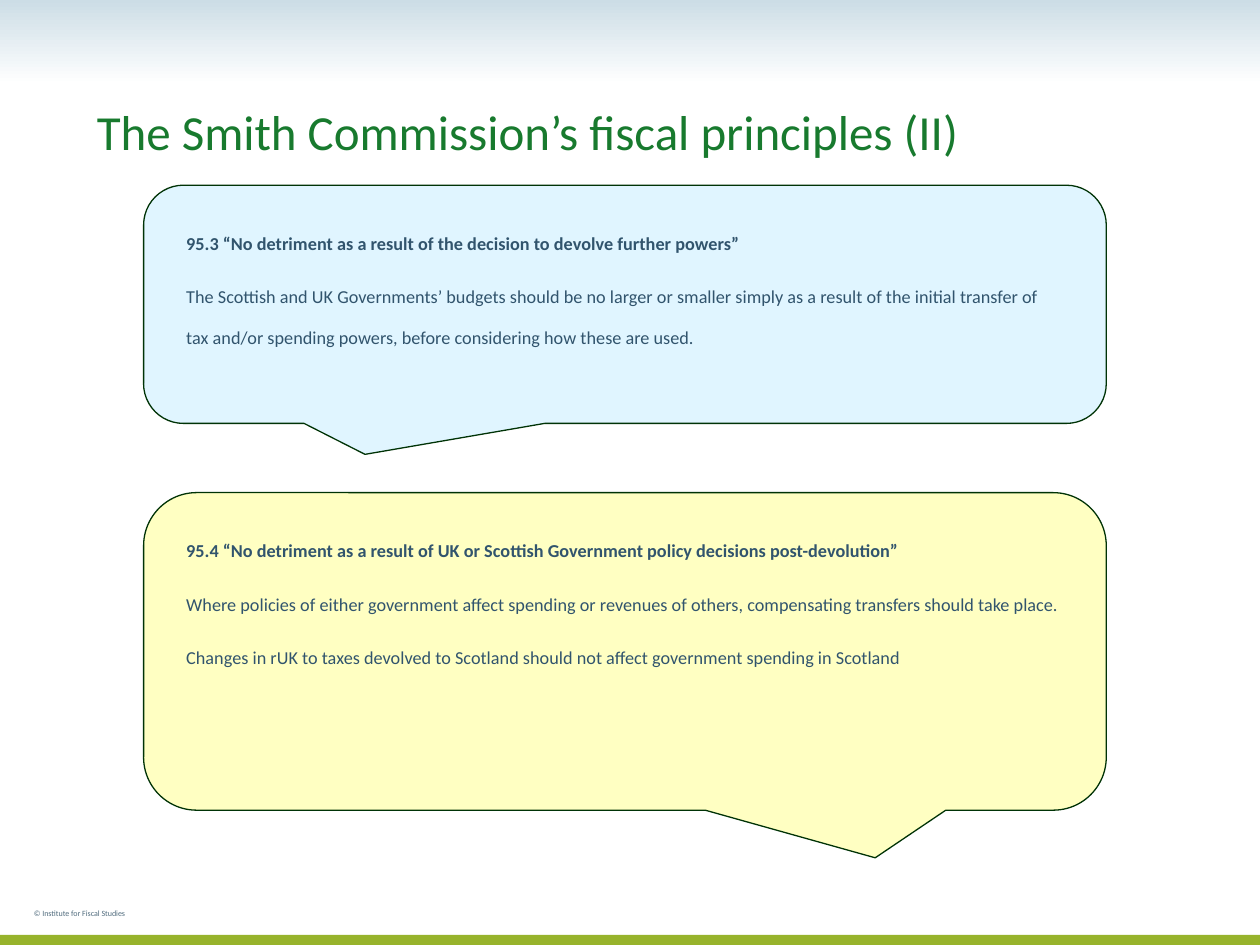
"""Build the slide on the Smith Commission's fiscal principles."""
import pptx
import pptx.dml.color
import pptx.enum.shapes
import pptx.enum.text
import pptx.util

Inches = pptx.util.Inches
Pt = pptx.util.Pt
RGBColor = pptx.dml.color.RGBColor
Shape = pptx.enum.shapes.MSO_SHAPE
Anchor = pptx.enum.text.MSO_ANCHOR

SKY = RGBColor(0xCC, 0xDD, 0xE6)
WHITE = RGBColor(0xFF, 0xFF, 0xFF)
LIME = RGBColor(0x97, 0xB3, 0x2C)
GREEN = RGBColor(0x18, 0x7A, 0x2E)
DARK_GREEN = RGBColor(0x00, 0x33, 0x06)
SLATE = RGBColor(0x31, 0x54, 0x6D)
GREY = RGBColor(0x52, 0x6D, 0x7F)
PALE_BLUE = RGBColor(0xE0, 0xF5, 0xFF)
PALE_YELLOW = RGBColor(0xFF, 0xFF, 0xC2)

FONT = "Calibri"
TITLE = "The Smith Commission’s fiscal principles (II)"
FOOTER = "© Institute for Fiscal Studies"
PRINCIPLES = [
    {
        "top": 1.47, "height": 1.89, "tail": (-0.27, 0.63), "fill": PALE_BLUE,
        "paragraphs": [
            "95.3 “No detriment as a result of the decision to devolve further powers”",
            "The Scottish and UK Governments’ budgets should be no larger or smaller simply "
            "as a result of the initial transfer of tax and/or spending powers, before "
            "considering how these are used.",
        ],
    },
    {
        "top": 3.91, "height": 2.52, "tail": (0.26, 0.65), "fill": PALE_YELLOW,
        "paragraphs": [
            "95.4 “No detriment as a result of UK or Scottish Government policy decisions "
            "post-devolution”",
            "Where policies of either government affect spending or revenues of others, "
            "compensating transfers should take place.",
            "Changes in rUK to taxes devolved to Scotland should not affect government "
            "spending in Scotland",
        ],
    },
]
CALLOUT_LEFT, CALLOUT_WIDTH = 1.14, 7.64
TEXT_LEFT, TEXT_WIDTH, TEXT_OFFSET = 1.38, 7.14, 0.17


def add_shape(slide, kind, left, top, width, height):
    shape = slide.shapes.add_shape(
        kind, Inches(left), Inches(top), Inches(width), Inches(height))
    shape.shadow.inherit = False
    shape.line.fill.background()
    return shape


def add_text(slide, box, texts, size, color, spacing=1.0, anchor=Anchor.TOP):
    text_frame = slide.shapes.add_textbox(*map(Inches, box)).text_frame
    text_frame.word_wrap = True
    text_frame.vertical_anchor = anchor
    text_frame.text = "\n".join(texts)
    for paragraph in text_frame.paragraphs:
        paragraph.line_spacing = spacing
        for run in paragraph.runs:
            run.font.name = FONT
            run.font.size = Pt(size)
            run.font.color.rgb = color
    return text_frame


def add_principle(slide, principle):
    top, height = principle["top"], principle["height"]
    callout = add_shape(slide, Shape.ROUNDED_RECTANGULAR_CALLOUT,
                        CALLOUT_LEFT, top, CALLOUT_WIDTH, height)
    for index, value in enumerate((*principle["tail"], 0.167)):
        callout.adjustments[index] = value
    callout.fill.solid()
    callout.fill.fore_color.rgb = principle["fill"]
    callout.line.color.rgb = DARK_GREEN
    callout.line.width = Pt(0.75)

    box = (TEXT_LEFT, top + TEXT_OFFSET, TEXT_WIDTH, height - 2 * TEXT_OFFSET)
    text_frame = add_text(slide, box, principle["paragraphs"], 10.4, SLATE, Pt(23.4))
    for paragraph in text_frame.paragraphs:
        paragraph.space_after = Pt(7.2)
    text_frame.paragraphs[0].runs[0].font.bold = True


def main():
    presentation = pptx.Presentation()
    presentation.slide_width = Inches(10)
    presentation.slide_height = Inches(7.5)
    slide = presentation.slides.add_slide(presentation.slide_layouts[6])

    header = add_shape(slide, Shape.RECTANGLE, 0, 0, 10, 0.67)
    header.fill.gradient()
    header.fill.gradient_angle = 270
    for stop, (position, color) in zip(header.fill.gradient_stops, ((0, SKY), (1, WHITE))):
        stop.position = position
        stop.color.rgb = color

    footer_bar = add_shape(slide, Shape.RECTANGLE, 0, 7.42, 10, 0.08)
    footer_bar.fill.solid()
    footer_bar.fill.fore_color.rgb = LIME

    add_text(slide, (0.17, 7.16, 2.75, 0.2), [FOOTER], 4.6, GREY)
    add_text(slide, (0.67, 0.25, 8.58, 1.08), [TITLE], 28, GREEN, 0.9, Anchor.BOTTOM)
    for principle in PRINCIPLES:
        add_principle(slide, principle)

    presentation.save("out.pptx")


if __name__ == "__main__":
    main()
